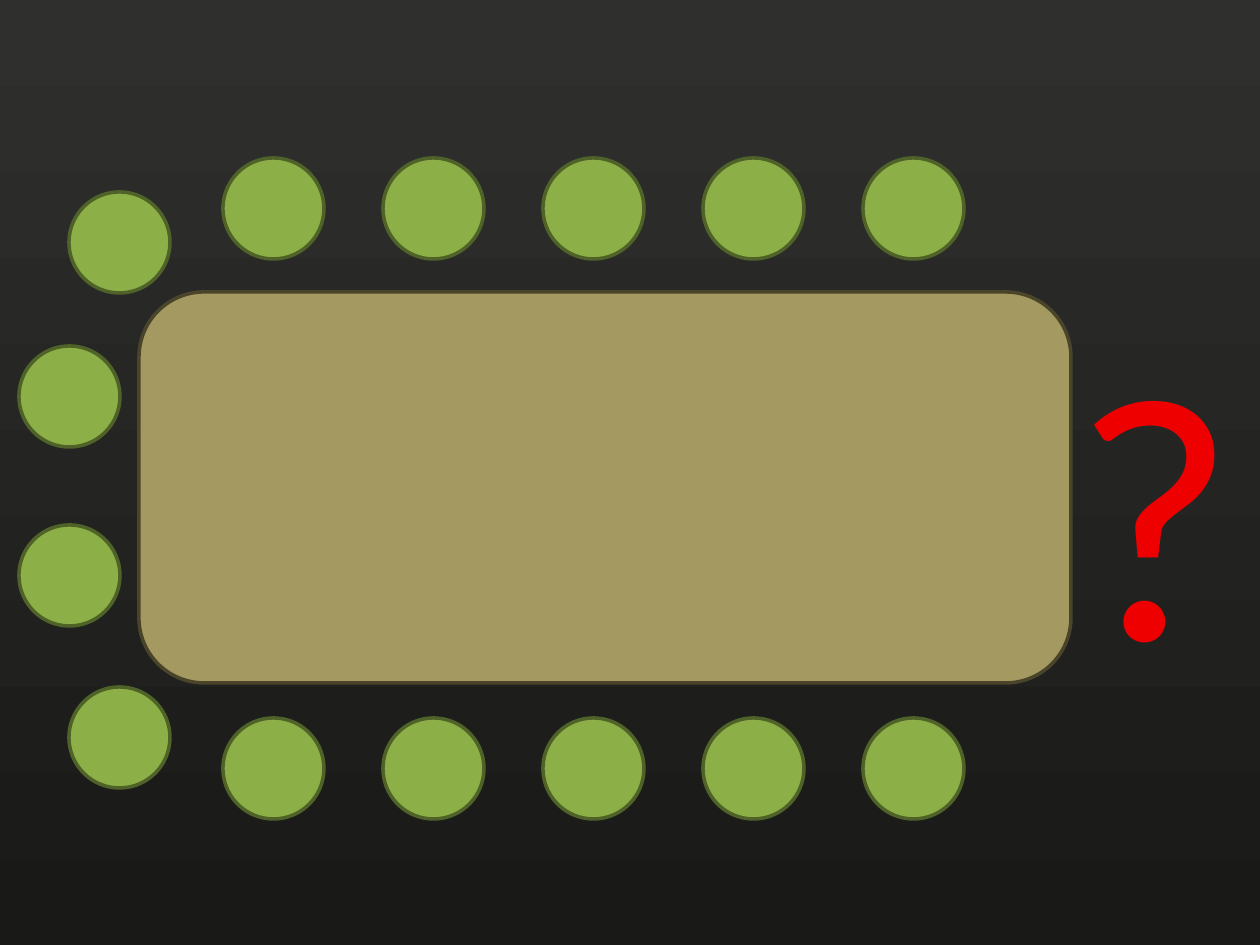
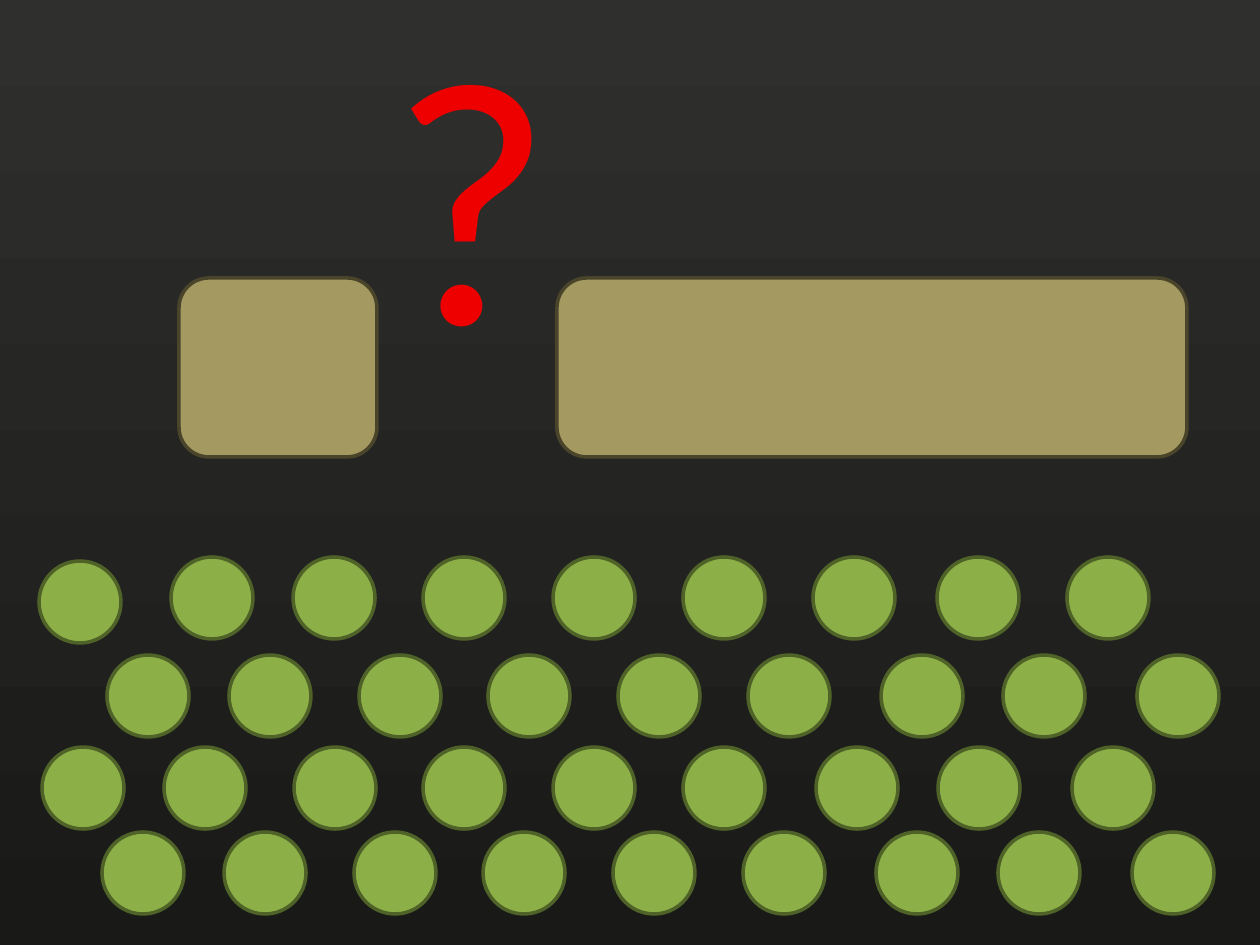
import pptx
import pptx.dml.color
import pptx.enum.shapes
import pptx.enum.text
import pptx.util

RGBColor = pptx.dml.color.RGBColor
SHAPE = pptx.enum.shapes.MSO_SHAPE

SCALE = pptx.util.Inches(1) / 126  # EMU in one px
WIDTH, HEIGHT = 1260, 945
FONT = "Calibri"

BACK_BOTTOM = RGBColor(0x19, 0x1A, 0x18)
BACK_TOP = RGBColor(0x2F, 0x30, 0x2E)
TABLE_FILL = RGBColor(0xA4, 0x99, 0x60)
TABLE_LINE = RGBColor(0x4A, 0x45, 0x2A)
SEAT_FILL = RGBColor(0x8C, 0xAF, 0x47)
SEAT_LINE = RGBColor(0x4F, 0x62, 0x28)
QUESTION = RGBColor(0xEE, 0x00, 0x00)


def px(n):
    return round(n * SCALE)


class Deck:
    def __init__(self):
        self.prs = pptx.Presentation()
        self.prs.slide_width = px(WIDTH)
        self.prs.slide_height = px(HEIGHT)
        self.s = None
        # Shared background, dark at the bottom and lighter at the top
        fill = self.prs.slide_master.background.fill
        fill.gradient()
        fill.gradient_angle = 90
        for stop, color in zip(fill.gradient_stops, (BACK_BOTTOM, BACK_TOP)):
            stop.color.rgb = color

    def new_slide(self):
        self.s = self.prs.slides.add_slide(self.prs.slide_layouts[6])

    def shape(self, kind, x, y, w, h, fill, line):
        sp = self.s.shapes.add_shape(kind, px(x), px(y), px(w), px(h))
        sp.shadow.inherit = False
        sp.fill.solid()
        sp.fill.fore_color.rgb = fill
        sp.line.color.rgb = line
        sp.line.width = pptx.util.Pt(2)

    def table(self, x, y, w, h):
        self.shape(SHAPE.ROUNDED_RECTANGLE, x, y, w, h, TABLE_FILL, TABLE_LINE)

    def seat(self, x, y, size):
        self.shape(SHAPE.OVAL, x, y, size, size, SEAT_FILL, SEAT_LINE)

    def question(self, x, y):
        sp = self.s.shapes.add_textbox(px(x), px(y), px(116), px(437))
        tf = sp.text_frame
        tf.word_wrap = True
        tf.auto_size = pptx.enum.text.MSO_AUTO_SIZE.SHAPE_TO_FIT_TEXT
        r = tf.paragraphs[0].add_run()
        r.text = "?"
        r.font.name = FONT
        r.font.size = pptx.util.Pt(200)
        r.font.color.rgb = QUESTION


def one_table(deck):
    deck.new_slide()
    deck.table(139, 292, 932, 391)

    # Seats along both long sides
    size = 101
    for y in (158, 718):
        for col in range(5):
            deck.seat(223 + 160 * col, y, size)

    deck.question(1061, 284)

    # Seats around the left end
    for x, y in ((69, 192), (69, 687), (19, 346), (19, 525)):
        deck.seat(x, y, size)


def two_tables(deck):
    deck.new_slide()
    deck.table(179, 278, 198, 179)
    deck.question(378, -32)
    deck.table(557, 278, 630, 179)

    # Top row, with its first seat a little lower
    size, top = 82, 557
    deck.seat(39, top + 4, size)
    for x in (171, 293, 423, 553, 683, 813, 937, 1067):
        deck.seat(x, top, size)

    # Staggered rows with the same spacing
    offsets = (0, 122, 252, 381, 511, 641, 774, 896, 1030)
    for left, y in ((107, 655), (42, 747), (102, 832)):
        for offset in offsets:
            deck.seat(left + offset, y, size)


def main():
    deck = Deck()
    one_table(deck)
    two_tables(deck)
    deck.prs.save("out.pptx")


if __name__ == "__main__":
    main()
